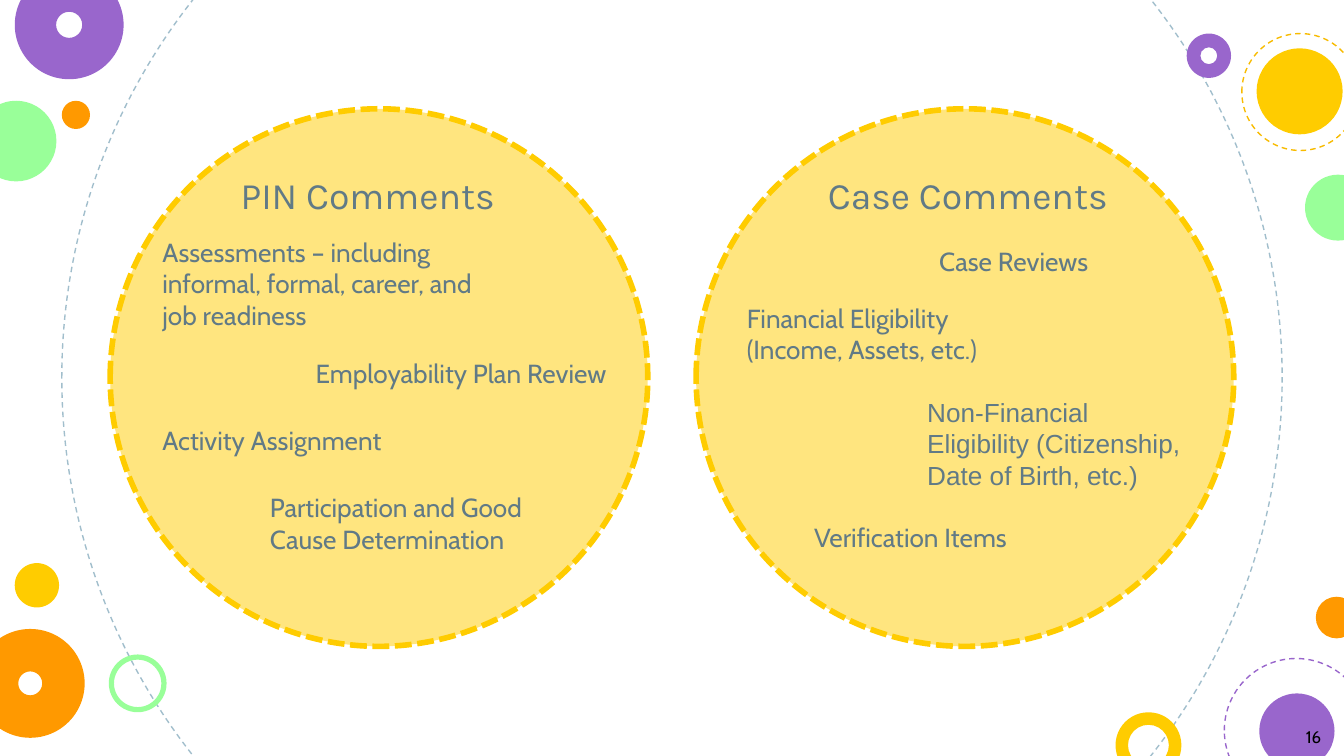
from dataclasses import dataclass
from typing import Optional

from lxml.etree import SubElement
from pptx import Presentation
from pptx.dml.color import RGBColor
from pptx.enum.dml import MSO_LINE
from pptx.enum.shapes import MSO_SHAPE
from pptx.enum.text import MSO_ANCHOR, MSO_AUTO_SIZE, PP_ALIGN
from pptx.oxml.ns import qn
from pptx.util import Inches, Pt


@dataclass(frozen=True)
class Theme:
    yellow: str = "FFCC00"
    amber: str = "F8BB00"
    orange: str = "FF9900"
    green: str = "99FF99"
    purple: str = "9966CC"
    mist: str = "A1BECC"
    slate: str = "617A86"
    black: str = "000000"
    heading_font: str = "Karla"
    body_font: str = "Cabin"
    plain_font: str = "Arial"
    heading_size: int = 20
    body_size: int = 14
    number_size: int = 9


THEME = Theme()
WIDTH = Inches(10)
HEIGHT = WIDTH * 9 // 16
UNIT = WIDTH // 100  # one column or row of a square grid, 100 columns wide


@dataclass(frozen=True)
class Circle:
    column: float
    row: float
    size: float
    fill: Optional[str] = None
    ring: Optional[float] = None  # thickness of a donut, as a share of its size
    line: Optional[str] = None
    line_width: float = 0.75
    dash: MSO_LINE = MSO_LINE.DASH
    opacity: int = 100


@dataclass(frozen=True)
class Label:
    text: str
    column: float
    row: float
    width: float
    height: float
    font: str = THEME.body_font
    size: int = THEME.body_size
    color: str = THEME.slate


def grid(*counts: float) -> list[int]:
    return [round(count * UNIT) for count in counts]


def draw_circle(page, circle: Circle) -> None:
    kind = MSO_SHAPE.OVAL if circle.ring is None else MSO_SHAPE.DONUT
    shape = page.shapes.add_shape(
        kind, *grid(circle.column, circle.row, circle.size, circle.size))
    shape.shadow.inherit = False
    if circle.ring is not None:
        shape.adjustments[0] = circle.ring
    if circle.fill:
        shape.fill.solid()
        shape.fill.fore_color.rgb = RGBColor.from_string(circle.fill)
        if circle.opacity < 100:
            color = shape.element.spPr.find(qn("a:solidFill")).find(qn("a:srgbClr"))
            SubElement(color, qn("a:alpha")).set("val", str(circle.opacity * 1000))
    else:
        shape.fill.background()
    if circle.line:
        shape.line.color.rgb = RGBColor.from_string(circle.line)
        shape.line.width = Pt(circle.line_width)
        shape.line.dash_style = circle.dash
    else:
        shape.line.fill.background()


def write_label(box, label: Label):
    box.left, box.top, box.width, box.height = grid(
        label.column, label.row, label.width, label.height)
    frame = box.text_frame
    frame.word_wrap = True
    frame.auto_size = MSO_AUTO_SIZE.SHAPE_TO_FIT_TEXT
    frame.vertical_anchor = MSO_ANCHOR.TOP
    para = frame.paragraphs[0]
    para.text = label.text
    para.space_before = Pt(0)
    para.font.name = label.font
    para.font.size = Pt(label.size)
    para.font.bold = False
    para.font.color.rgb = RGBColor.from_string(label.color)
    return frame


def add_label(page, label: Label):
    return write_label(page.shapes.add_textbox(0, 0, 0, 0), label)


# Decoration around the edges, from back to front
DECORATION = [
    Circle(4.6, -17.3, 90.8, line=THEME.mist),
    Circle(-1.8, 7.5, 6, THEME.green),
    Circle(83, 53, 4.9, THEME.yellow, ring=0.19),
    Circle(1.1, -2.2, 8.1, THEME.purple, ring=0.38),
    Circle(4.6, 7.5, 2.1, THEME.orange),
    Circle(91.1, 49, 10.7, line=THEME.purple),
    Circle(8.1, 48.7, 4.3, THEME.green, ring=0.09),
    Circle(97.9, 44.4, 3.1, THEME.orange),
    Circle(-1.8, 46.8, 8.1, THEME.orange, ring=0.39),
    Circle(93.7, 51.6, 5.6, THEME.purple),
    Circle(88.3, 2.5, 3.3, THEME.purple, ring=0.31),
    Circle(93.5, 3.6, 6.4, THEME.yellow),
    Circle(97.1, 13, 4.9, THEME.green),
    Circle(92.4, 2.5, 8.7, line=THEME.amber),
    Circle(1.1, 41.9, 3.3, THEME.yellow),
]

# Two comment circles, mirrored about the middle of the slide
CIRCLE_SIZE = 40
CIRCLE_MARGIN = 8.2
COMMENT_CIRCLES = [
    Circle(column, 8.1, CIRCLE_SIZE, THEME.yellow, line=THEME.yellow,
           line_width=3, dash=MSO_LINE.SQUARE_DOT, opacity=50)
    for column in (100 - CIRCLE_MARGIN - CIRCLE_SIZE, CIRCLE_MARGIN)
]

# Headings by placeholder index
HEADINGS = {
    1: Label("PIN Comments", 16.9, 12.3, 22.5, 4.4,
             THEME.heading_font, THEME.heading_size),
    3: Label("Case Comments", 60.6, 12.3, 23.7, 4.4,
             THEME.heading_font, THEME.heading_size),
}

ONE_LINE, TWO_LINES, THREE_LINES = 3.4, 5.7, 8.1
COMMENTS = [
    Label("Assessments – including informal, formal, career, and job readiness",
          11.1, 17.1, 25.2, THREE_LINES),
    Label("Employability Plan Review", 22.5, 26.1, 27.3, ONE_LINE),
    Label("Activity Assignment", 11.1, 31.1, 19.9, ONE_LINE),
    Label("Participation and Good Cause Determination",
          19.1, 36.1, 21.8, TWO_LINES),
    Label("Financial Eligibility (Income, Assets, etc.)",
          54.6, 22, 21.3, TWO_LINES),
    Label("Non-Financial Eligibility (Citizenship, Date of Birth, etc.)",
          68, 29, 21.9, THREE_LINES, font=THEME.plain_font),
    Label("Case Reviews", 68.9, 17.8, 21.3, ONE_LINE),
    Label("Verification Items", 59.6, 38.3, 21.3, ONE_LINE),
]
PAGE_NUMBER = Label("16", 94.7, 53.3, 4.6, 3,
                    size=THEME.number_size, color=THEME.black)


def main() -> None:
    deck = Presentation()
    deck.slide_width, deck.slide_height = WIDTH, HEIGHT
    page = deck.slides.add_slide(deck.slide_layouts.get_by_name("Comparison"))

    for circle in DECORATION + COMMENT_CIRCLES:
        draw_circle(page, circle)

    # Headings go in front of the circles; unused placeholders go away
    for box in list(page.placeholders):
        tree = box.element.getparent()
        label = HEADINGS.get(box.placeholder_format.idx)
        if label:
            write_label(box, label)
            tree.append(box.element)
        else:
            tree.remove(box.element)

    for label in COMMENTS:
        add_label(page, label)

    # Page number
    frame = add_label(page, PAGE_NUMBER)
    frame.auto_size = MSO_AUTO_SIZE.NONE
    frame.vertical_anchor = MSO_ANCHOR.MIDDLE
    frame.paragraphs[0].alignment = PP_ALIGN.RIGHT

    deck.save("out.pptx")


if __name__ == "__main__":
    main()
